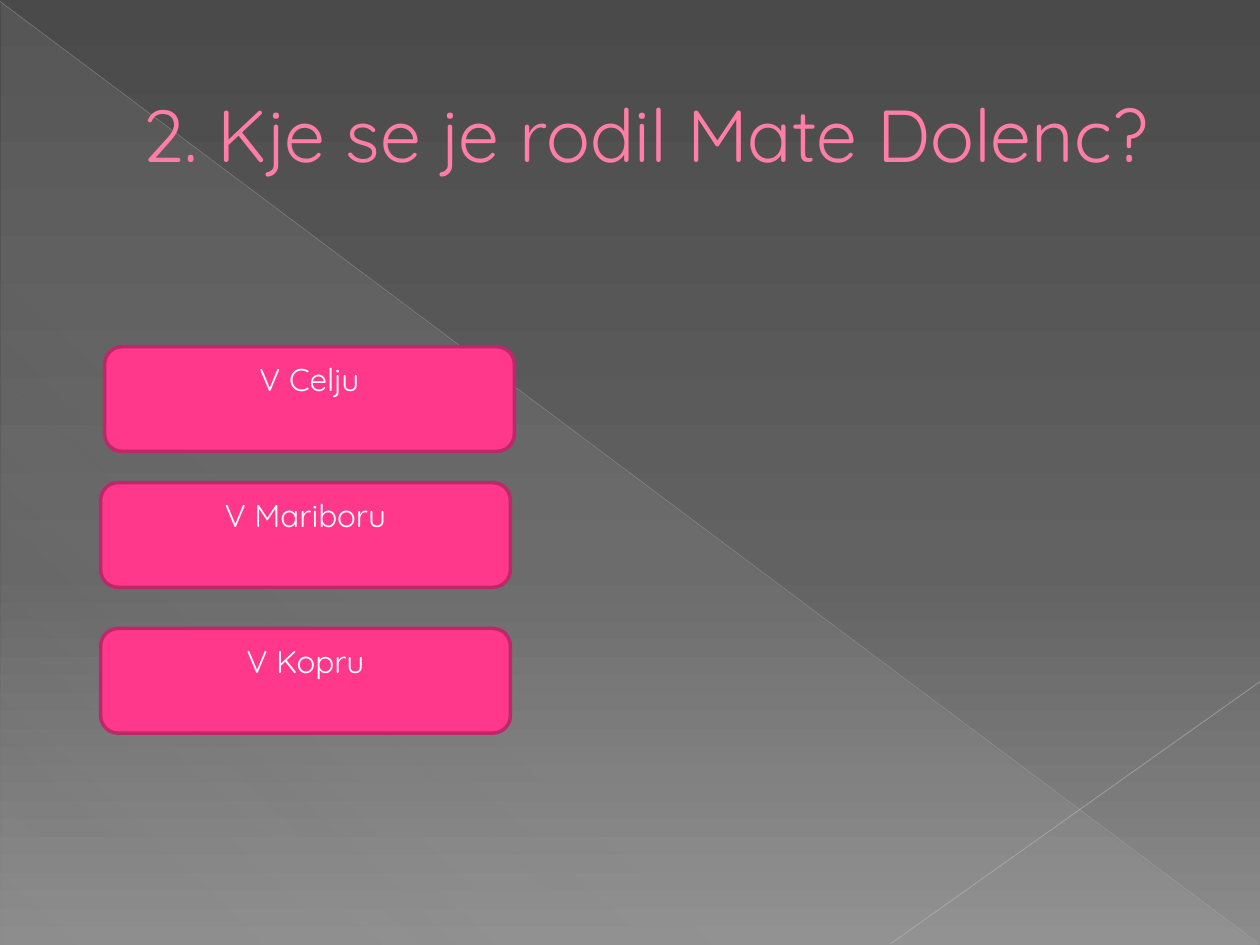
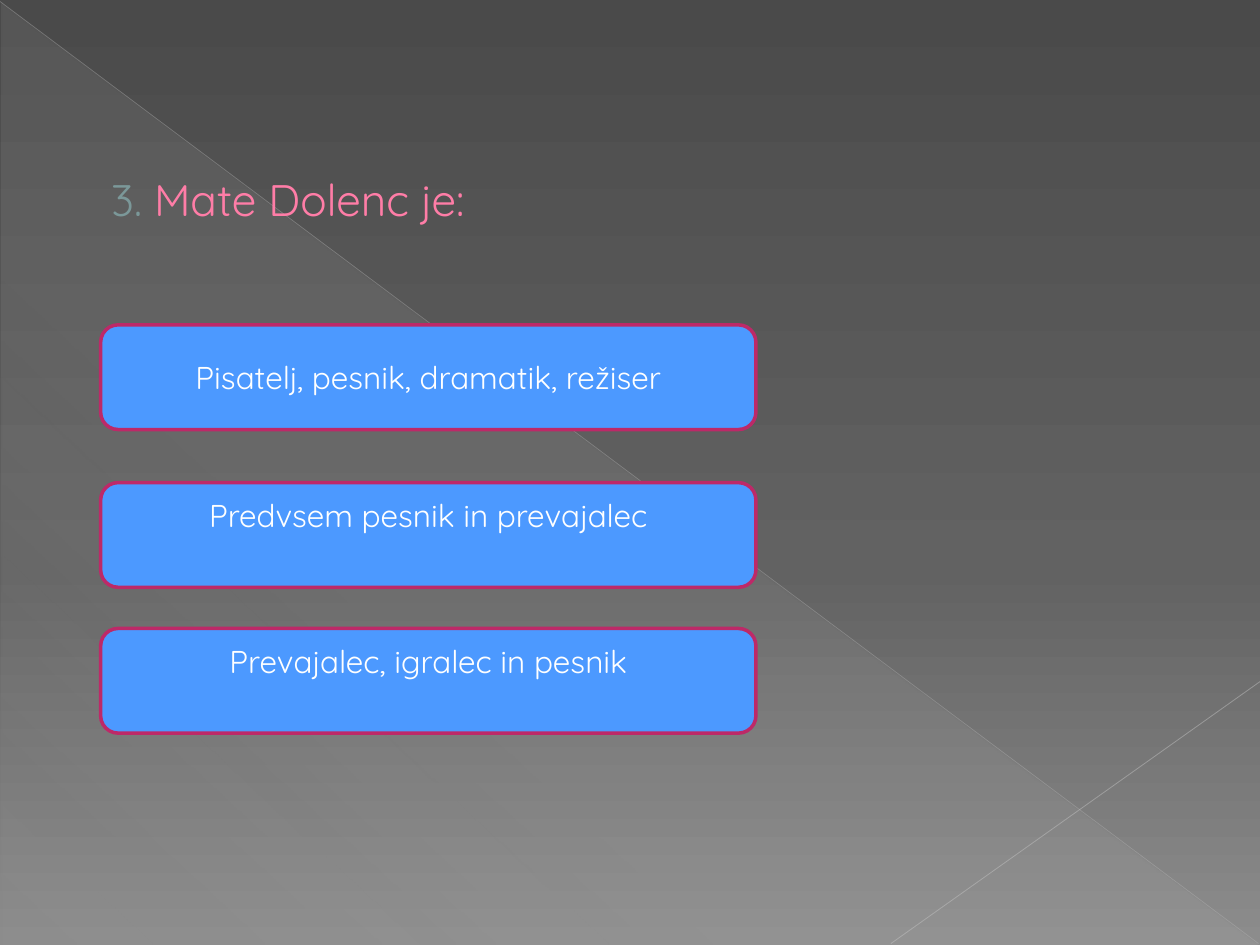
"""Builds two quiz slides about Mate Dolenc on a shared grey gradient design."""
from lxml import etree
from pptx import Presentation
from pptx import util as u
from pptx.dml.color import RGBColor
from pptx.enum import shapes, text
from pptx.oxml.ns import qn

FONT = "Quicksand"
WHITE, PINK, SLATE, BORDER = "FFFFFF", "FF7DA7", "7B9899", "BD2968"
BACKDROP = [(0, "4A4A4A", 100), (60, "626262", 100), (100, "8C8C8C", 100)]
SHEEN = [(0, "D2D2D2", 10), (70, "D2D2D2", 8), (100, "D2D2D2", 1)]
DIAGONALS = [
    ((0, 0.03, 25.37, 19.02), "BFBFBF", 0.39, 35),
    ((25.4, 13.74, 17.96, 19.02), "C6C6C6", 0.47, 45),
]
BUTTON_HEIGHT = 2.11
INSET = 0.13
RAISED = 0.92

QUESTIONS = [
    {
        "title": [("2. Kje se je rodil Mate Dolenc?", PINK)],
        "title_place": (1.27, 0.74, 22.86, 3.89),
        "title_size": 42,
        "title_anchor": text.MSO_ANCHOR.MIDDLE,
        "fill": "FF388C",
        "width": 8.26,
        "answers": [
            ("V Celju", 2.11, 6.99, RAISED),
            ("V Mariboru", 2.03, 9.73, RAISED),
            ("V Kopru", 2.03, 12.67, RAISED),
        ],
    },
    {
        "title": [("3. ", SLATE), ("Mate Dolenc je:", PINK)],
        "title_place": (0.64, 1.27, 23.7, 3.4),
        "title_size": 25.2,
        "title_anchor": text.MSO_ANCHOR.BOTTOM,
        "fill": "4C99FF",
        "width": 13.21,
        "answers": [
            ("Predvsem pesnik in prevajalec", 2.03, 9.73, RAISED),
            ("Prevajalec, igralec in pesnik", 2.03, 12.67, RAISED),
            ("Pisatelj, pesnik, dramatik, režiser", 2.03, 6.55, INSET),
        ],
    },
]


def rgb(color):
    return RGBColor.from_string(color)


def cm(values):
    return [u.Cm(value) for value in values]


def set_alpha(color_element, percent):
    etree.SubElement(color_element, qn("a:alpha"), val=str(percent * 1000))


def set_gradient(owner, fill, stops, angle):
    fill.gradient()
    gradient = owner.element.find(".//" + qn("a:gradFill"))
    stop_list = gradient.find(qn("a:gsLst"))
    for stop in list(stop_list):
        stop_list.remove(stop)
    for position, color, alpha in stops:
        stop = etree.SubElement(stop_list, qn("a:gs"), pos=str(position * 1000))
        set_alpha(etree.SubElement(stop, qn("a:srgbClr"), val=color), alpha)
    gradient.find(qn("a:lin")).set("ang", str(angle * 60000))


def write(shape, spans, size, anchor=text.MSO_ANCHOR.MIDDLE,
          align=text.PP_ALIGN.LEFT, bottom=INSET, indent=0):
    frame = shape.text_frame
    frame.word_wrap = True
    frame.vertical_anchor = anchor
    frame.margin_bottom = u.Cm(bottom)
    para = frame.paragraphs[0]
    para.alignment = align
    if indent:
        properties = para._p.get_or_add_pPr()
        properties.set("marL", str(u.Cm(indent)))
        properties.set("indent", "0")
    for words, color in spans:
        span = para.add_run()
        span.text = words
        span.font.name = FONT
        span.font.size = u.Pt(size)
        span.font.color.rgb = rgb(color)


def add_backdrop(page):
    set_gradient(page, page.background.fill, BACKDROP, 90)
    triangle = page.shapes.add_shape(
        shapes.MSO_SHAPE.RIGHT_TRIANGLE, *cm((0.03, 0.05, 25.35, 19)))
    triangle.shadow.inherit = False
    triangle.line.fill.background()
    set_gradient(triangle, triangle.fill, SHEEN, 133)
    for ends, color, width, alpha in DIAGONALS:
        line = page.shapes.add_connector(shapes.MSO_CONNECTOR.STRAIGHT, *cm(ends))
        line.line.color.rgb = rgb(color)
        line.line.width = u.Pt(width)
        set_alpha(line.element.find(".//" + qn("a:srgbClr")), alpha)
        etree.SubElement(line.element.spPr, qn("a:effectLst"))


def add_button(page, words, place, fill, bottom):
    button = page.shapes.add_shape(shapes.MSO_SHAPE.ROUNDED_RECTANGLE, *cm(place))
    button.shadow.inherit = False
    button.fill.solid()
    button.fill.fore_color.rgb = rgb(fill)
    button.line.color.rgb = rgb(BORDER)
    button.line.width = u.Pt(2)
    write(button, [(words, WHITE)], 18, align=text.PP_ALIGN.CENTER, bottom=bottom)


def add_question(deck, question):
    page = deck.slides.add_slide(deck.slide_layouts[6])
    add_backdrop(page)
    title = page.shapes.add_textbox(*cm(question["title_place"]))
    write(title, question["title"], question["title_size"],
          anchor=question["title_anchor"], indent=1.35)
    for words, left, top, bottom in question["answers"]:
        place = (left, top, question["width"], BUTTON_HEIGHT)
        add_button(page, words, place, question["fill"], bottom)


def main():
    deck = Presentation()
    deck.slide_width, deck.slide_height = cm((25.4, 19.05))
    for question in QUESTIONS:
        add_question(deck, question)
    deck.save("out.pptx")


if __name__ == "__main__":
    main()
